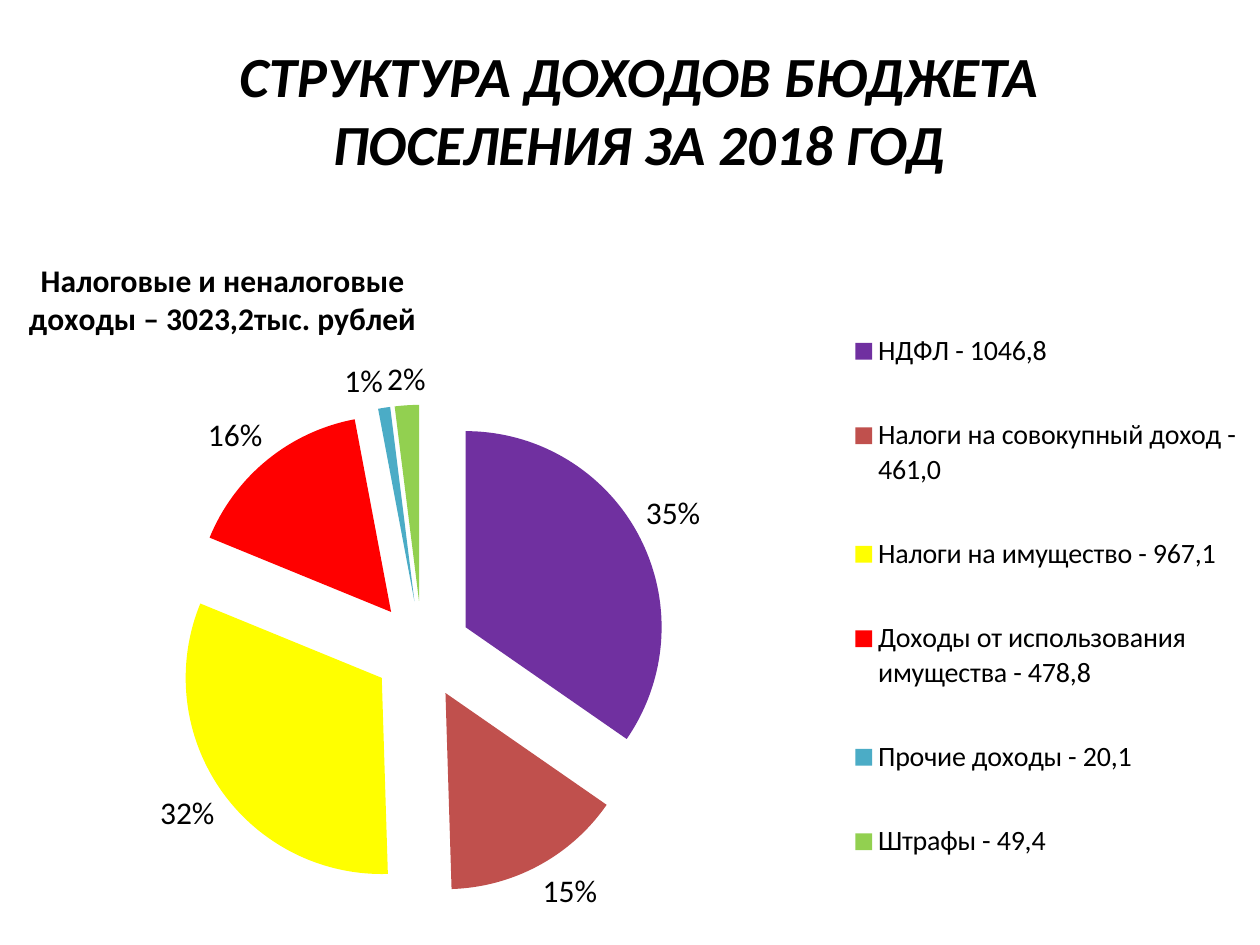
from lxml.etree import SubElement, Element
from pptx import Presentation
from pptx.chart.data import CategoryChartData
from pptx.dml.color import RGBColor
from pptx.enum.chart import XL_CHART_TYPE as ChartType
from pptx.enum.chart import XL_LABEL_POSITION as LabelPosition
from pptx.enum.chart import XL_LEGEND_POSITION as LegendPosition
from pptx.enum.text import MSO_ANCHOR as Anchor
from pptx.enum.text import PP_ALIGN as Align
from pptx.oxml.ns import qn
from pptx.util import Inches, Pt

COLORS = {
    "text": "000000",
    "income_tax": "7030A0",
    "total_income": "C0504D",
    "property_tax": "FFFF00",
    "property_use": "FF0000",
    "other": "4BACC6",
    "fines": "92D050",
}
REVENUES = [
    ("НДФЛ - 1046,8", 35, "income_tax"),
    ("Налоги на совокупный доход - 461,0", 15, "total_income"),
    ("Налоги на имущество - 967,1", 32, "property_tax"),
    ("Доходы от использования имущества - 478,8", 16, "property_use"),
    ("Прочие доходы - 20,1", 1, "other"),
    ("Штрафы - 49,4", 2, "fines"),
]


def style_font(font, size, bold=False, italic=False):
    font.name = "Calibri"
    font.size = Pt(size)
    font.bold = bold
    font.italic = italic
    font.color.rgb = RGBColor.from_string(COLORS["text"])


def write(para, text, align=Align.CENTER, **style):
    para.alignment = align
    span = para.add_run()
    span.text = text
    style_font(span.font, **style)


def place(element, index, inner=False, **fractions):
    for old in element.findall(qn("c:layout")):
        element.remove(old)
    layout = Element(qn("c:layout"))
    manual = SubElement(layout, qn("c:manualLayout"))
    if inner:
        SubElement(manual, qn("c:layoutTarget")).set("val", "inner")
    for axis in ("x", "y"):
        SubElement(manual, qn(f"c:{axis}Mode")).set("val", "edge")
    for name, value in fractions.items():
        SubElement(manual, qn(f"c:{name}")).set("val", str(value))
    element.insert(index, layout)


class Slide:
    def __init__(self, deck):
        self.page = deck.slides.add_slide(deck.slide_layouts[6])

    def text(self, text, left, top, width, height, **style):
        box = self.page.shapes.add_textbox(
            Inches(left), Inches(top), Inches(width), Inches(height))
        frame = box.text_frame
        frame.word_wrap = True
        frame.vertical_anchor = Anchor.MIDDLE
        write(frame.paragraphs[0], text, **style)

    def pie(self, title, rows, left, top, width, height):
        data = CategoryChartData()
        data.categories = [name for name, _, _ in rows]
        data.add_series("Series 1", [value for _, value, _ in rows])
        chart = self.page.shapes.add_chart(
            ChartType.PIE, Inches(left), Inches(top),
            Inches(width), Inches(height), data).chart
        style_font(chart.font, 18)
        self.chart_title(chart, title)
        self.legend(chart)
        self.slices(chart.plots[0], [color for _, _, color in rows])
        plot_area = chart._chartSpace.chart.plotArea
        place(plot_area, 0, inner=True, x=0.14, y=0.24, w=0.39, h=0.69)

    def chart_title(self, chart, lines):
        chart.has_title = True
        frame = chart.chart_title.text_frame
        for number, line in enumerate(lines):
            para = frame.add_paragraph() if number else frame.paragraphs[0]
            write(para, line, size=18, bold=True)
        place(chart.chart_title._element, 1, x=0.02, y=0.03)

    def legend(self, chart):
        chart.has_legend = True
        legend = chart.legend
        legend.position = LegendPosition.RIGHT
        legend.include_in_layout = False
        style_font(legend.font, 16)
        place(legend._element, 1, x=0.67, y=0.07, w=0.32, h=0.88)

    def slices(self, plot, colors):
        plot.vary_by_categories = True
        series = plot.series[0]
        for number, color in enumerate(colors):
            fill = series.points[number].format.fill
            fill.solid()
            fill.fore_color.rgb = RGBColor.from_string(COLORS[color])
        explosion = Element(qn("c:explosion"))
        explosion.set("val", "25")
        series._element.find(qn("c:dPt")).addprevious(explosion)
        plot.has_data_labels = True
        labels = plot.data_labels
        labels.show_percentage = True
        labels.show_value = False
        labels.number_format = "0%"
        labels.number_format_is_linked = False
        labels.position = LabelPosition.OUTSIDE_END
        style_font(labels.font, 18)


def main():
    deck = Presentation()
    deck.slide_width, deck.slide_height = Inches(10), Inches(7.5)
    slide = Slide(deck)
    slide.text("СТРУКТУРА ДОХОДОВ БЮДЖЕТА ПОСЕЛЕНИЯ ЗА 2018 ГОД",
               0.83, 0.29, 8.48, 1.15, size=32.4, bold=True, italic=True)
    slide.pie(["Налоговые и неналоговые", "доходы – 3023,2тыс. рублей"],
              REVENUES, 0, 1.86, 10, 5.64)
    deck.save("out.pptx")


if __name__ == "__main__":
    main()
